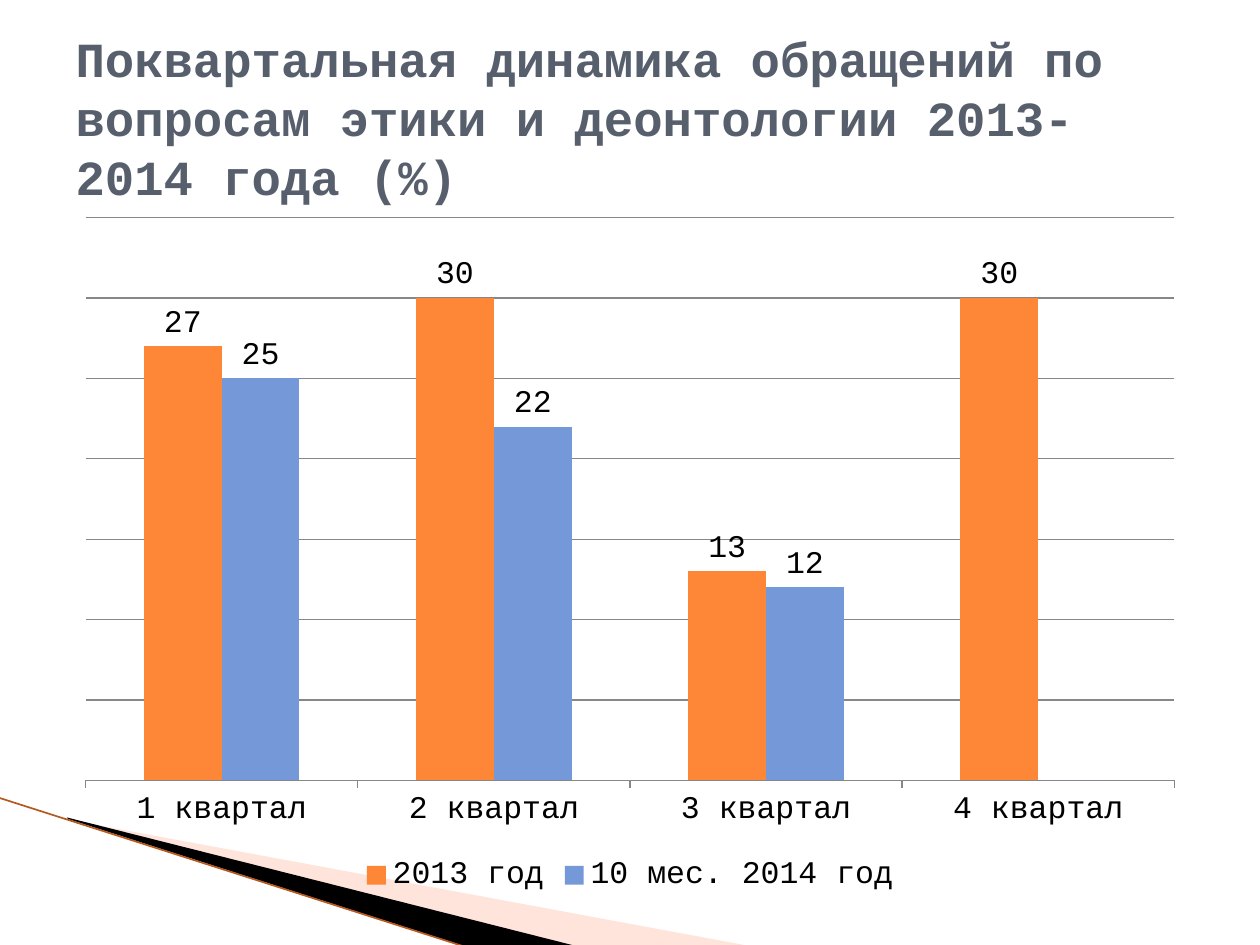
from lxml import etree
from pptx import Presentation
from pptx.chart.data import CategoryChartData
from pptx.dml.color import RGBColor
from pptx.enum.chart import XL_CHART_TYPE as ChartType, XL_LABEL_POSITION as LabelPosition
from pptx.enum.chart import XL_LEGEND_POSITION as LegendPosition, XL_TICK_MARK as TickMark
from pptx.enum.shapes import MSO_CONNECTOR as Connector
from pptx.enum.text import MSO_ANCHOR as Anchor, MSO_AUTO_SIZE as AutoSize, PP_ALIGN as Align
from pptx.oxml.ns import qn
from pptx.util import Cm, Pt

COLORS = {
    "title": "575F6D",
    "text": "000000",
    "grid": "878787",
    "orange": "FE8637",
    "blue": "7598D9",
    "pale": "FFBCA5",
    "black": "000000",
    "edge": "B5591F",
}


class SlideBuilder:
    font_name = "Courier New"

    def __init__(self, page):
        self.page = page

    def color(self, name):
        return RGBColor.from_string(COLORS[name])

    def style_font(self, font, size, color, bold=False):
        font.name = self.font_name
        font.size = Pt(size)
        font.bold = bold
        font.color.rgb = self.color(color)

    def title(self, text, left, top, width, height):
        box = self.page.shapes.title
        box.left, box.top, box.width, box.height = Cm(left), Cm(top), Cm(width), Cm(height)
        frame = box.text_frame
        frame.text = text
        frame.word_wrap = True
        frame.auto_size = AutoSize.NONE
        frame.vertical_anchor = Anchor.MIDDLE
        para = frame.paragraphs[0]
        para.alignment = Align.LEFT
        self.style_font(para.font, 28, "title", bold=True)

    def wedge(self, points, color, opacity=100):
        start, *others = [(Cm(x), Cm(y)) for x, y in points]
        outline = self.page.shapes.build_freeform(*start)
        outline.add_line_segments(others, close=True)
        shape = outline.convert_to_shape()
        shape.shadow.inherit = False
        shape.line.fill.background()
        shape.fill.solid()
        shape.fill.fore_color.rgb = self.color(color)
        if opacity < 100:
            tint = shape.fill._xPr.find(".//" + qn("a:srgbClr"))
            etree.SubElement(tint, qn("a:alpha"), val=str(opacity * 1000))

    def line(self, start, end, color, width):
        ends = [Cm(value) for value in (*start, *end)]
        line = self.page.shapes.add_connector(Connector.STRAIGHT, *ends)
        line.line.color.rgb = self.color(color)
        line.line.width = Pt(width)
        etree.SubElement(line._element.spPr, qn("a:effectLst"))

    def column_chart(self, categories, series, left, top, width, height):
        data = CategoryChartData(number_format="0")
        data.categories = categories
        for name, values, _ in series:
            data.add_series(name, values)
        area = [Cm(value) for value in (left, top, width, height)]
        chart = self.page.shapes.add_chart(ChartType.COLUMN_CLUSTERED, *area, data).chart
        self.style_font(chart.font, 18, "text")
        chart.has_title = False
        chart.has_legend = True
        chart.legend.position = LegendPosition.BOTTOM
        chart.legend.include_in_layout = False

        value_axis = chart.value_axis
        value_axis.visible = False
        value_axis.minimum_scale, value_axis.maximum_scale = 0, 35
        value_axis.major_unit = 5
        value_axis.has_major_gridlines = True
        category_axis = chart.category_axis
        category_axis.major_tick_mark = TickMark.OUTSIDE
        for axis_line in (value_axis.major_gridlines.format.line, category_axis.format.line):
            axis_line.color.rgb = self.color("grid")
            axis_line.width = Pt(0.75)

        plot = chart.plots[0]
        plot.gap_width = 150
        plot.overlap = 0
        plot.vary_by_categories = False
        for column, (_, _, color) in zip(plot.series, series):
            column.format.fill.solid()
            column.format.fill.fore_color.rgb = self.color(color)
            labels = column.data_labels
            labels.show_value = True
            labels.position = LabelPosition.OUTSIDE_END
            labels.number_format = "0;;"
            labels.number_format_is_linked = False


def main():
    deck = Presentation()
    deck.slide_width, deck.slide_height = Cm(25.4), Cm(19.05)
    builder = SlideBuilder(deck.slides.add_slide(deck.slide_layouts[5]))

    builder.wedge([(1.4, 16.53), (15.11, 19.07), (11.58, 19.07), (1.4, 16.51)], "pale", 40)
    builder.wedge([(1.35, 16.48), (11.61, 19.07), (9.45, 19.1), (1.37, 16.51)], "black")
    builder.line((-0.03, 16.08), (9.42, 19.1), "edge", 0.95)

    builder.column_chart(
        [f"{quarter} квартал" for quarter in range(1, 5)],
        [
            ("2013 год", (27, 30, 13, 30), "orange"),
            ("10 мес. 2014 год", (25, 22, 12, 0), "blue"),
        ],
        1.27, 4.11, 22.86, 14.02,
    )
    builder.title(
        "Поквартальная динамика обращений по вопросам этики и деонтологии 2013-2014 года (%)",
        1.27, 0.76, 22.86, 3.18,
    )
    deck.save("out.pptx")


if __name__ == "__main__":
    main()
